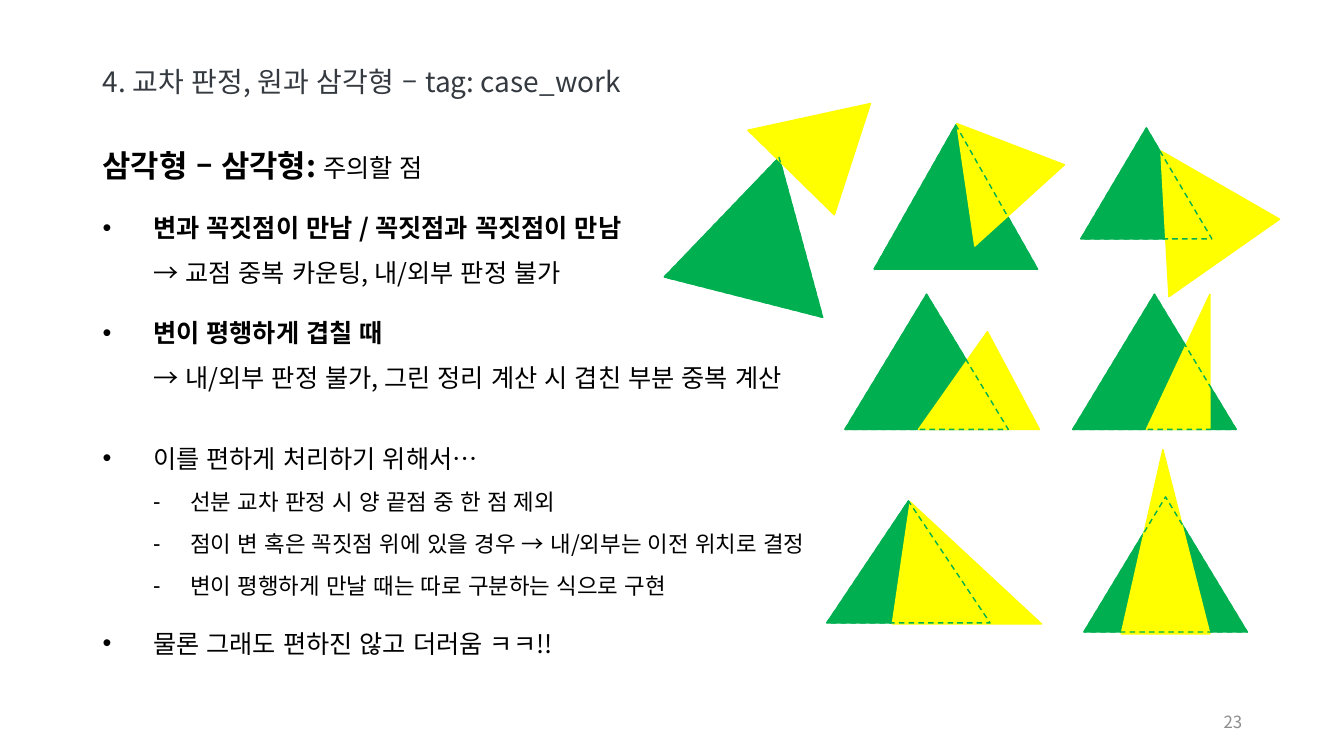
from dataclasses import dataclass

from lxml.etree import SubElement
from pptx import Presentation
from pptx.dml.color import RGBColor
from pptx.enum.dml import MSO_LINE
from pptx.enum.lang import MSO_LANGUAGE_ID
from pptx.enum.shapes import MSO_SHAPE
from pptx.enum.text import MSO_ANCHOR, PP_ALIGN
from pptx.oxml.ns import qn
from pptx.util import Pt

PX = 9144  # EMU per px, 100 px to the inch


@dataclass(frozen=True)
class Theme:
    font: str = "Noto Sans CJK KR"
    bullet_font: str = "Arial"
    title: RGBColor = RGBColor(0x34, 0x3A, 0x40)
    body: RGBColor = RGBColor(0, 0, 0)
    number: RGBColor = RGBColor(0x8C, 0x8C, 0x8C)
    base: RGBColor = RGBColor(0x00, 0xB0, 0x50)
    overlap: RGBColor = RGBColor(0xFF, 0xFF, 0x00)
    title_size: int = 20
    heading_size: int = 22
    point_size: int = 18
    step_size: int = 16
    number_size: int = 12


THEME = Theme()

# Per level: paragraph format, left margin, hanging indent, bullet
LEVELS = {
    "heading": ({"line_spacing": 1.5, "space_before": Pt(10)}, 0, 0, None),
    "point": ({"line_spacing": 1.5, "space_before": Pt(10)}, 50, 50, "•"),
    "section": ({"line_spacing": 1.5, "space_before": Pt(25)}, 50, 50, "•"),
    "step": ({"line_spacing": 1.3, "space_before": Pt(5), "level": 1}, 87, 37, "‐"),
}

# Per paragraph: level, lines, each line a list of (text, size, bold)
NOTES = [
    ("heading", [[("삼각형 – 삼각형: ", THEME.heading_size, True),
                  ("주의할 점", THEME.point_size, False)]]),
    ("point", [[("변과 꼭짓점이 만남 / 꼭짓점과 꼭짓점이 만남", THEME.point_size, True)],
               [("→ 교점 중복 카운팅, 내/외부 판정 불가", THEME.point_size, False)]]),
    ("point", [[("변이 평행하게 겹칠 때", THEME.point_size, True)],
               [("→ 내/외부 판정 불가, 그린 정리 계산 시 겹친 부분 중복 계산",
                 THEME.point_size, False)]]),
    ("section", [[("이를 편하게 처리하기 위해서…", THEME.point_size, False)]]),
    ("step", [[("선분 교차 판정 시 양 끝점 중 한 점 제외", THEME.step_size, False)]]),
    ("step", [[("점이 변 혹은 꼭짓점 위에 있을 경우 → 내/외부는 이전 위치로 결정",
                THEME.step_size, False)]]),
    ("step", [[("변이 평행하게 만날 때는 따로 구분하는 식으로 구현", THEME.step_size, False)]]),
    ("point", [[("물론 그래도 편하진 않고 더러움 ㅋㅋ!!", THEME.point_size, False)]]),
]

# Per case: green box, its rotation, yellow box relative to it, rotation, apex
CASES = [
    ((674, 154, 162, 143), 14.3, (87, -72, 120, 104), 44.4, 0.57),
    ((867, 124, 162, 143), 0, (50, -9, 120, 102), 317.8, 0.57),
    ((1072, 127, 130, 110), 0, (40, 17, 134, 123), 325, 0.57),
    ((838, 292, 162, 134), 0, (73, 37, 120, 97), 0, 0.57),
    ((1064, 292, 162, 134), 0, (73, 0, 63, 134), 0, 1),
    ((820, 497, 162, 121), 0, (65, 1, 148, 121), 0, 0.12),
    ((1075, 493, 162, 134), 0, (37, -47, 88, 183), 0, 0.47),
]


def emu(box):
    return [length * PX for length in box]


def set_format(target, values):
    for name, value in values.items():
        setattr(target, name, value)


def add_text(paragraph, text, size, color, bold=False):
    run = paragraph.add_run()
    run.text = text
    set_format(run.font, {"name": THEME.font, "size": Pt(size), "bold": bold,
                          "language_id": MSO_LANGUAGE_ID.KOREAN})
    run.font.color.rgb = color
    SubElement(run.font._element, qn("a:ea")).set("typeface", THEME.font)


def add_frame(slide, box, anchor):
    frame = slide.shapes.add_textbox(*emu(box)).text_frame
    set_format(frame, {"word_wrap": True, "vertical_anchor": anchor})
    return frame


def add_label(slide, box, text, size, color, align, spacing):
    paragraph = add_frame(slide, box, MSO_ANCHOR.MIDDLE).paragraphs[0]
    set_format(paragraph, {"line_spacing": spacing, "alignment": align})
    add_text(paragraph, text, size, color)


def format_level(paragraph, level):
    values, margin, hanging, bullet = LEVELS[level]
    set_format(paragraph, values)
    if bullet:
        properties = paragraph._p.get_or_add_pPr()
        properties.set("marL", str(margin * PX))
        properties.set("indent", str(-hanging * PX))
        SubElement(properties, qn("a:buFont")).set("typeface", THEME.bullet_font)
        SubElement(properties, qn("a:buChar")).set("char", bullet)


def add_notes(slide, box):
    frame = add_frame(slide, box, MSO_ANCHOR.TOP)
    for index, (level, lines) in enumerate(NOTES):
        paragraph = frame.add_paragraph() if index else frame.paragraphs[0]
        format_level(paragraph, level)
        for number, line in enumerate(lines):
            if number:
                paragraph.add_line_break()
            for text, size, bold in line:
                add_text(paragraph, text, size, THEME.body, bold)


def add_triangle(group, box, rotation, apex, line_color, fill_color=None):
    """Draw a filled triangle, or a dashed outline when there is no fill."""
    triangle = group.shapes.add_shape(MSO_SHAPE.ISOSCELES_TRIANGLE, *emu(box))
    triangle.adjustments[0] = apex
    triangle.rotation = rotation
    triangle.shadow.inherit = False
    triangle.line.color.rgb = line_color
    triangle.line.width = Pt(1)
    if fill_color is None:
        triangle.fill.background()
        triangle.line.dash_style = MSO_LINE.DASH
    else:
        triangle.fill.solid()
        triangle.fill.fore_color.rgb = fill_color


def add_case(slide, box, tilt, offset_box, rotation, apex):
    """Lay a yellow triangle on a green one whose hidden edges stay dashed."""
    group = slide.shapes.add_group_shape()
    left, top = box[:2]
    dx, dy, width, height = offset_box
    add_triangle(group, box, tilt, 0.5, THEME.base, THEME.base)
    add_triangle(group, (left + dx, top + dy, width, height), rotation, apex,
                 THEME.overlap, THEME.overlap)
    add_triangle(group, box, tilt, 0.5, THEME.base)


def main():
    deck = Presentation()
    set_format(deck, {"slide_width": 1333 * PX, "slide_height": 750 * PX})
    slide = deck.slides.add_slide(deck.slide_layouts[6])
    add_label(slide, (92, 40, 1150, 64), "4. 교차 판정, 원과 삼각형 – tag: case_work",
              THEME.title_size, THEME.title, PP_ALIGN.LEFT, 1.5)
    add_notes(slide, (92, 122, 1150, 553))
    add_label(slide, (942, 695, 300, 40), "23",
              THEME.number_size, THEME.number, PP_ALIGN.RIGHT, 1.1)
    for case in CASES:
        add_case(slide, *case)
    deck.save("out.pptx")


if __name__ == "__main__":
    main()
